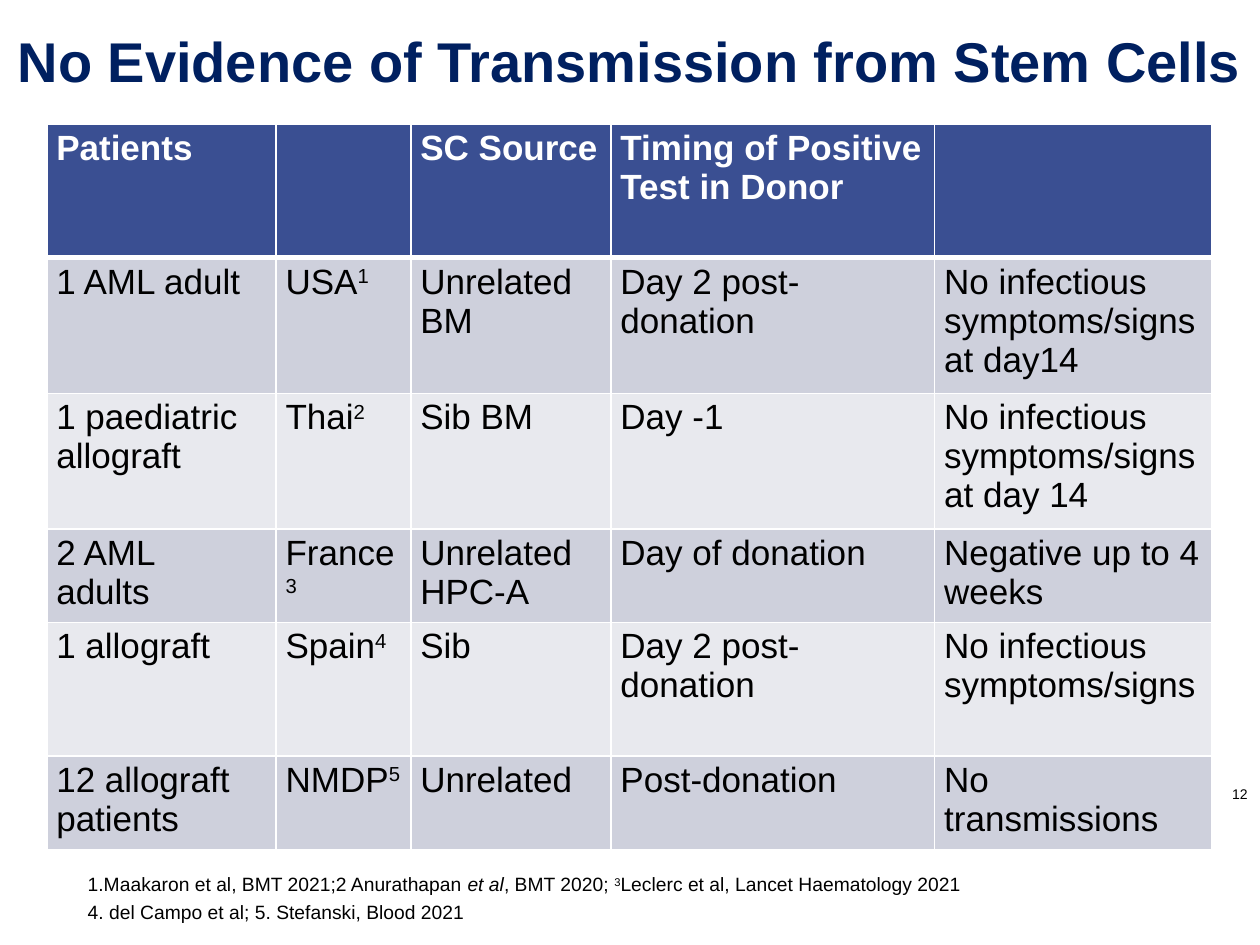
from lxml.etree import SubElement
from pptx import Presentation
from pptx.dml.color import RGBColor
from pptx.enum.text import MSO_ANCHOR, PP_ALIGN
from pptx.oxml.ns import qn
from pptx.util import Pt

COLORS = {
    "navy": "002060",
    "header": "3A4F92",
    "band_dark": "CED0DC",
    "band_light": "E8E9EE",
    "white": "FFFFFF",
    "black": "000000",
}
FORMATS = {
    "title": {"size": Pt(32), "bold": True},
    "header": {"size": Pt(20), "bold": True},
    "cell": {"size": Pt(20), "bold": False},
    "reference": {"size": Pt(11)},
    "number": {"size": Pt(8)},
}
MARGINS = {
    "margin_left": Pt(5.4),
    "margin_right": Pt(5.4),
    "margin_top": Pt(2.7),
    "margin_bottom": Pt(2.7),
}
COLUMN_WIDTHS = [131, 77, 114.4, 185, 158.4]
ROW_HEIGHTS = [76.3, 76.3, 76.3, 53.3, 76.3, 53.3]
ROWS = [
    ["Patients", "", "SC Source", "Timing of Positive Test in Donor", ""],
    ["1 AML adult", "USA^1", "Unrelated\nBM", "Day 2 post-donation",
     "No infectious symptoms/signs at day14"],
    ["1 paediatric allograft", "Thai^2", "Sib BM", "Day -1",
     "No infectious symptoms/signs at day 14"],
    ["2 AML\nadults", "France^3", "Unrelated\nHPC-A", "Day of donation",
     "Negative up to 4 weeks"],
    ["1 allograft", "Spain^4", "Sib", "Day 2 post-donation",
     "No infectious symptoms/signs"],
    ["12 allograft patients", "NMDP^5", "Unrelated", "Post-donation",
     "No transmissions"],
]
REFERENCES = [
    [("1.Maakaron et al, BMT 2021;2 Anurathapan ", ""), ("et al", "italic"),
     (", BMT 2020; ", ""), ("3", "super"),
     ("Leclerc et al, Lancet Haematology 2021", "")],
    [("4. del Campo et al; 5. Stefanski, Blood 2021", "")],
]


def apply(target, values):
    for name, value in values.items():
        setattr(target, name, value)


class SlideBuilder:
    def __init__(self, presentation, font_name):
        self.slide = presentation.slides.add_slide(presentation.slide_layouts[5])
        self.font_name = font_name

    def runs(self, paragraph, pieces, style, color):
        for text, kind in pieces:
            run = paragraph.add_run()
            run.text = text
            apply(run.font, {"name": self.font_name, **FORMATS[style]})
            run.font.color.rgb = RGBColor.from_string(COLORS[color])
            if kind == "italic":
                run.font.italic = True
            elif kind == "super":
                run._r.get_or_add_rPr().set("baseline", "30000")

    def title(self, text, left, top, width, height):
        shape = self.slide.shapes.title
        apply(shape, {"left": Pt(left), "top": Pt(top),
                      "width": Pt(width), "height": Pt(height)})
        apply(shape.text_frame, {"word_wrap": True, "vertical_anchor": MSO_ANCHOR.TOP})
        paragraph = shape.text_frame.paragraphs[0]
        paragraph.alignment = PP_ALIGN.CENTER
        self.runs(paragraph, [(text, "")], "title", "navy")

    def text_box(self, lines, box, style, frame_format, alignment, indent=0, gap=0):
        shape = self.slide.shapes.add_textbox(*map(Pt, box))
        frame = shape.text_frame
        apply(frame, {"word_wrap": True, **frame_format})
        for index, pieces in enumerate(lines):
            paragraph = frame.add_paragraph() if index else frame.paragraphs[0]
            paragraph.alignment = alignment
            if indent:
                paragraph._p.get_or_add_pPr().set("marL", str(Pt(indent)))
            if index:
                paragraph.space_before = Pt(gap)
            self.runs(paragraph, pieces, style, "black")

    def borders(self, cell, widths):
        properties = cell._tc.get_or_add_tcPr()
        for side, width in zip("LRTB", widths):
            line = SubElement(properties, qn(f"a:ln{side}"), w=str(Pt(width)))
            fill = SubElement(line, qn("a:solidFill"))
            SubElement(fill, qn("a:srgbClr"), val=COLORS["white"])

    def cell(self, cell, text, row):
        style, color, fill = "cell", "black", "band_dark" if row % 2 else "band_light"
        if row == 0:
            style, color, fill = "header", "white", "header"
        apply(cell, MARGINS)
        self.borders(cell, (1, 1, 3 if row == 1 else 1, 3 if row == 0 else 1))
        cell.fill.solid()
        cell.fill.fore_color.rgb = RGBColor.from_string(COLORS[fill])
        for index, line in enumerate(text.split("\n") if text else []):
            frame = cell.text_frame
            paragraph = frame.add_paragraph() if index else frame.paragraphs[0]
            word, _, mark = line.partition("^")
            pieces = [(word, "")] + ([(mark, "super")] if mark else [])
            self.runs(paragraph, pieces, style, color)

    def table(self, rows, left, top, widths, heights):
        table = self.slide.shapes.add_table(
            len(rows), len(widths), Pt(left), Pt(top),
            Pt(sum(widths)), Pt(sum(heights))).table
        for column, width in zip(table.columns, widths):
            column.width = Pt(width)
        for row, height in zip(table.rows, heights):
            row.height = Pt(height)
        for row_index, texts in enumerate(rows):
            for column_index, text in enumerate(texts):
                self.cell(table.cell(row_index, column_index), text, row_index)


def main():
    presentation = Presentation()
    apply(presentation, {"slide_width": Pt(720), "slide_height": Pt(540)})
    builder = SlideBuilder(presentation, "Arial")
    builder.title("No Evidence of Transmission from Stem Cells", 0, 11.5, 720, 78.5)
    builder.text_box([[("12", "")]], (567.4, 442.8, 152.6, 21.6), "number",
                     {"vertical_anchor": MSO_ANCHOR.MIDDLE}, PP_ALIGN.RIGHT)
    builder.text_box(REFERENCES, (13, 496, 680, 51), "reference",
                     {"vertical_anchor": MSO_ANCHOR.TOP, **MARGINS},
                     PP_ALIGN.LEFT, indent=31.7, gap=2.7)
    builder.table(ROWS, 26.8, 71, COLUMN_WIDTHS, ROW_HEIGHTS)
    presentation.save("out.pptx")


if __name__ == "__main__":
    main()
